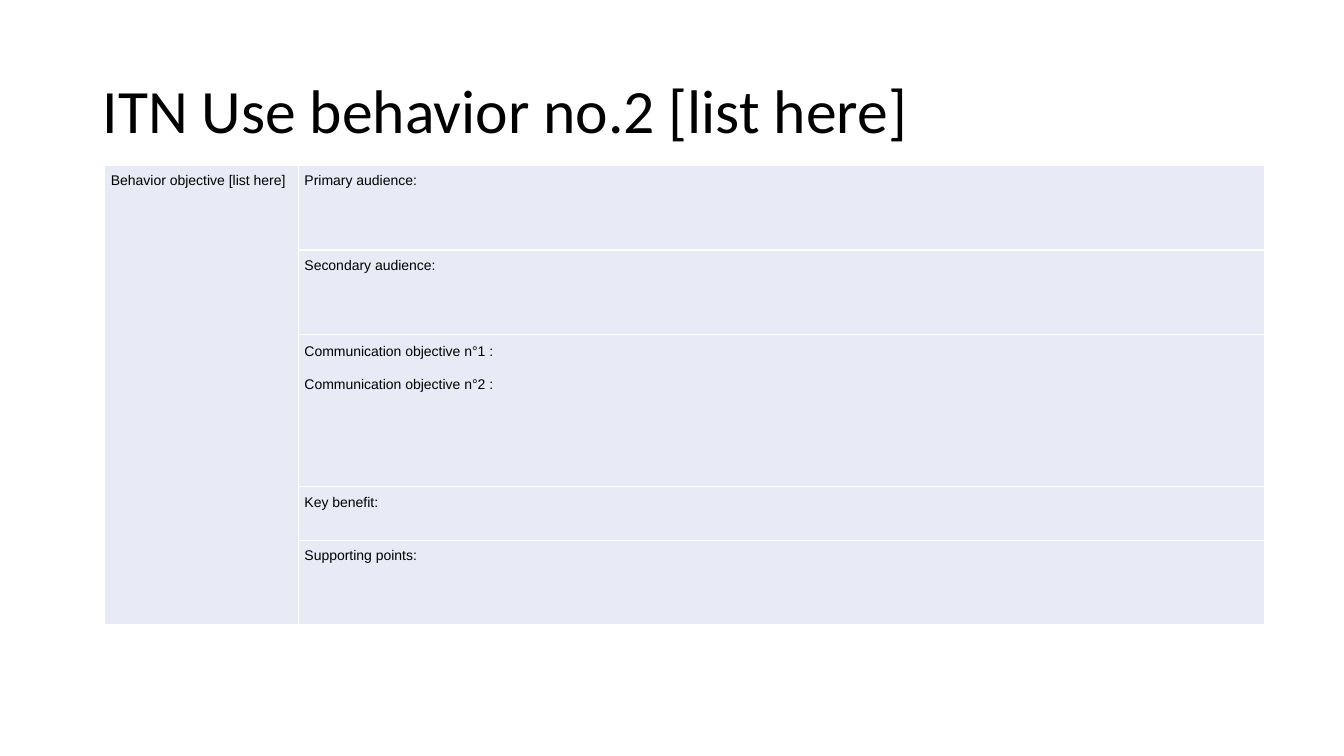
from pptx import Presentation
from pptx.dml.color import RGBColor
from pptx.enum import text
from pptx.oxml import parse_xml
from pptx.oxml.ns import nsdecls
from pptx.util import Inches, Pt

TITLE = "ITN Use behavior no.2 [list here]"
OBJECTIVE = ["Behavior objective [list here]"]
# (row height, paragraphs, line spacing of the first paragraph)
ROWS = [
    (0.84, ["Primary audience:"], 1.06),
    (0.84, ["Secondary audience:"], 1.06),
    (1.51, ["Communication objective n°1 :", "Communication objective n°2 :"], 1.15),
    (0.53, ["Key benefit:"], 1.06),
    (0.84, ["Supporting points:"], 1.06),
]
COLUMNS = [1.92, 9.58]
TITLE_BOX = (0.92, 0.4, 11.5, 1.45)
TABLE_AT = (1.04, 1.64)
THEME = {
    "ink": "000000", "cell": "E8EBF5", "border": "FFFFFF", "border_pt": 1,
    "title_font": "Calibri", "title_size": 44,
    "body_font": "Arial", "body_size": 10,
    "spacing": 1.06, "gap": 12,
}


def write(tf, lines, font, size, spacing, first_spacing=None, gap=0):
    for i, line in enumerate(lines):
        p = tf.paragraphs[0] if i == 0 else tf.add_paragraph()
        p.line_spacing = first_spacing if i == 0 and first_spacing else spacing
        p.space_before = Pt(gap if i else 0)
        r = p.add_run()
        r.text = line
        r.font.name = font
        r.font.size = Pt(size)
        r.font.color.rgb = RGBColor.from_string(THEME["ink"])


def style_cell(cell):
    tc_pr = cell._tc.get_or_add_tcPr()
    for side in "LRTB":
        tc_pr.append(parse_xml(
            f'<a:ln{side} {nsdecls("a")} w="{Pt(THEME["border_pt"])}"><a:solidFill>'
            f'<a:srgbClr val="{THEME["border"]}"/></a:solidFill></a:ln{side}>'))
    cell.fill.solid()
    cell.fill.fore_color.rgb = RGBColor.from_string(THEME["cell"])
    cell.margin_left, cell.margin_right = Inches(0.06), Inches(0.04)
    cell.margin_top = cell.margin_bottom = Inches(0.07)


def write_cell(cell, lines, first_spacing=None):
    write(cell.text_frame, lines, THEME["body_font"], THEME["body_size"],
          THEME["spacing"], first_spacing, THEME["gap"])


def add_title(slide):
    tf = slide.shapes.add_textbox(*map(Inches, TITLE_BOX)).text_frame
    tf.word_wrap = True
    tf.vertical_anchor = text.MSO_ANCHOR.MIDDLE
    write(tf, [TITLE], THEME["title_font"], THEME["title_size"], 0.9)


def add_behavior_table(slide):
    size = sum(COLUMNS), sum(height for height, _, _ in ROWS)
    table = slide.shapes.add_table(
        len(ROWS), len(COLUMNS), *map(Inches, TABLE_AT + size)).table
    table.first_row = table.horz_banding = False
    for column, width in zip(table.columns, COLUMNS):
        column.width = Inches(width)
    for cell in table.iter_cells():
        style_cell(cell)
    for i, (height, lines, first_spacing) in enumerate(ROWS):
        table.rows[i].height = Inches(height)
        write_cell(table.cell(i, 1), lines, first_spacing)
    objective = table.cell(0, 0)
    objective.merge(table.cell(len(ROWS) - 1, 0))
    write_cell(objective, OBJECTIVE)


def main():
    prs = Presentation()
    prs.slide_width, prs.slide_height = Inches(13.33), Inches(7.5)
    slide = prs.slides.add_slide(prs.slide_layouts[6])
    add_title(slide)
    add_behavior_table(slide)
    prs.save("out.pptx")


if __name__ == "__main__":
    main()
